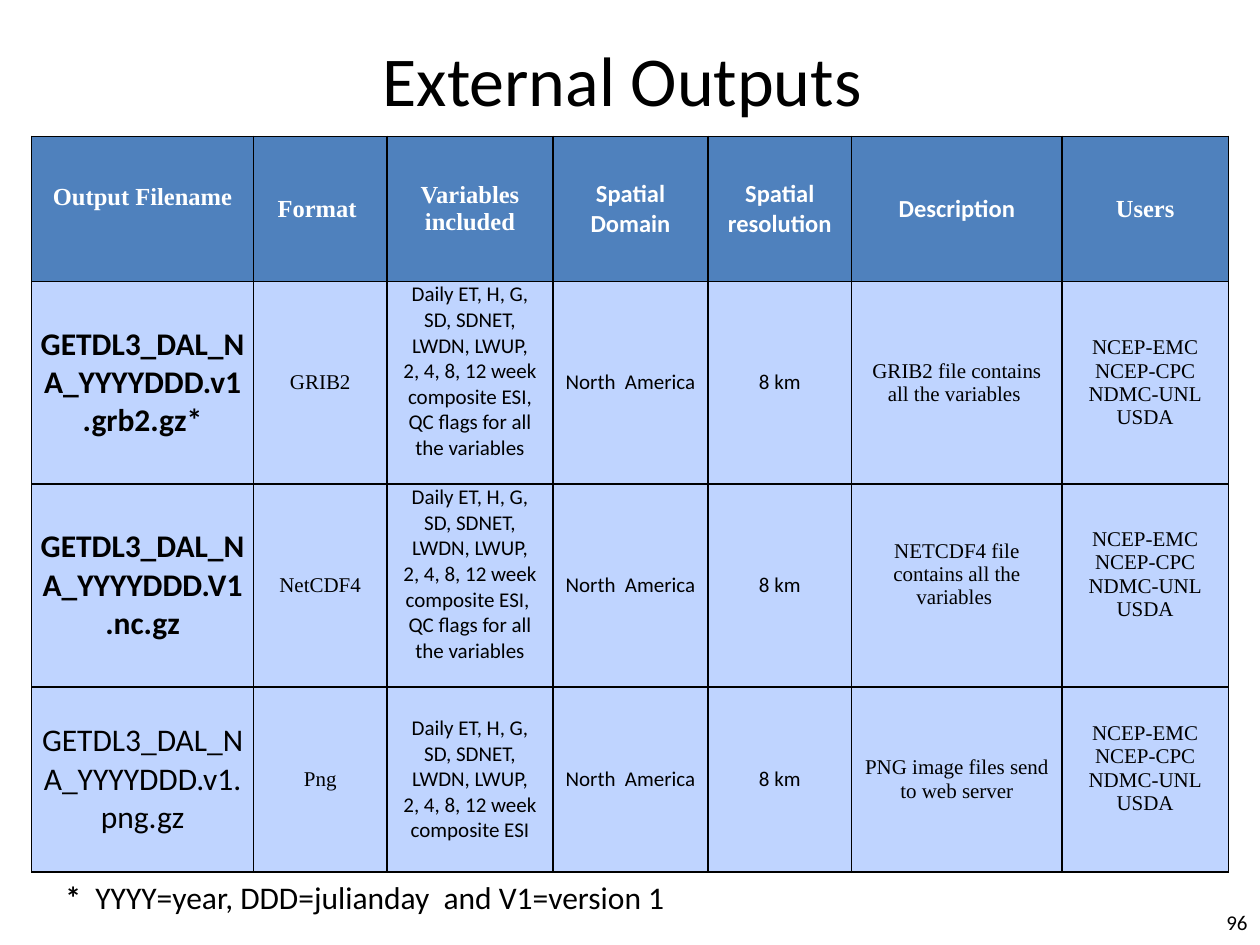
from lxml import etree
from pptx import Presentation
from pptx.dml.color import RGBColor
from pptx.enum.text import MSO_ANCHOR, PP_ALIGN
from pptx.oxml.ns import qn
from pptx.util import Cm, Pt

MID, TOP = MSO_ANCHOR.MIDDLE, MSO_ANCHOR.TOP
LEFT, MIDST, RIGHT = PP_ALIGN.LEFT, PP_ALIGN.CENTER, PP_ALIGN.RIGHT
SANS, SERIF = "Calibri", "Times New Roman"
BLACK, WHITE, BLUE, PALE = "000000", "FFFFFF", "4F81BD", "BFD4FF"


def write(frame, text, size=12, font=SANS, color=BLACK, bold=False, align=MIDST):
    """Fill a frame, one paragraph a line; text between | marks is bold."""
    frame.word_wrap = True
    for i, line in enumerate(text.split("\n")):
        para = frame.add_paragraph() if i else frame.paragraphs[0]
        para.alignment = align
        for j, part in enumerate(line.split("|")):
            if part:
                run = para.add_run()
                run.text = part
                run.font.size = Pt(size)
                run.font.name = font
                run.font.bold = bold or j % 2 == 1
                run.font.color.rgb = RGBColor.from_string(color)


def edge(cell):
    """Draw a thin black line on all four sides of a cell."""
    props = cell._tc.get_or_add_tcPr()
    for i, side in enumerate(("lnL", "lnR", "lnT", "lnB")):
        line = etree.Element(qn("a:" + side), w=str(Pt(1)))
        fill = etree.SubElement(line, qn("a:solidFill"))
        etree.SubElement(fill, qn("a:srgbClr"), val=BLACK)
        props.insert(i, line)


prs = Presentation()
prs.slide_width, prs.slide_height = Cm(25.4), Cm(19.05)
slide = prs.slides.add_slide(prs.slide_layouts[6])

# Title, page number and footnote
texts = [
    ((1.27, 0, 22.86, 3.18), "External Outputs ", MID, dict(size=40)),
    ((23.5, 18.08, 1.9, 1.02), "96", MID, dict(align=RIGHT)),
    ((1.07, 17.58, 19.25, 1.02), "|* | YYYY=year, DDD=julianday  and V1=version 1",
     TOP, dict(size=18, align=LEFT)),
]
for place, text, anchor, style in texts:
    frame = slide.shapes.add_textbox(*map(Cm, place)).text_frame
    frame.vertical_anchor = anchor
    write(frame, text, **style)

# Table content
heads = ["Output Filename", "Format ", "Variables included", "Spatial Domain",
         "Spatial resolution", "Description", "Users"]
daily = "Daily ET, H, G, SD, SDNET, LWDN, LWUP,\n2, 4, 8, 12 week composite ESI"
flags = "\nQC flags for all the variables"
area, res = "North  America", "8 km"
users = "NCEP-EMC\nNCEP-CPC\nNDMC-UNL\nUSDA"
rows = [
    heads,
    ["GETDL3_DAL_NA_YYYYDDD.v1.grb2.gz*", "GRIB2", daily + "," + flags,
     area, res, "GRIB2 file contains all the variables ", users],
    ["GETDL3_DAL_NA_YYYYDDD.V1.nc.gz", "NetCDF4", daily + ", " + flags,
     area, res, "NETCDF4 file contains all the variables ", users],
    ["GETDL3_DAL_NA_YYYYDDD.v1.png.gz", "Png", daily,
     area, res, "PNG image files send to web server", users],
]
wide = [4.47, 2.69, 3.35, 3.12, 2.9, 4.24, 3.35]
high = [2.92, 4.09, 4.09, 3.73]
head_fonts = [SERIF, SERIF, SERIF, SANS, SANS, SANS, SERIF]
body_fonts = [SANS, SERIF, SANS, SANS, SANS, SERIF, SERIF]
raised = {(0, 0), (1, 2), (2, 2), (2, 5), (2, 6), (3, 6)}  # text sits above centre

grid = slide.shapes.add_table(len(high), len(wide), Cm(0.64), Cm(2.75),
                              Cm(sum(wide)), Cm(sum(high))).table
for col, width in zip(grid.columns, wide):
    col.width = Cm(width)
for row, height in zip(grid.rows, high):
    row.height = Cm(height)

for r, row in enumerate(rows):
    for c, text in enumerate(row):
        cell = grid.cell(r, c)
        cell.vertical_anchor = MID
        cell.margin_left = cell.margin_right = Cm(0.18)
        cell.margin_top = 0
        cell.margin_bottom = Cm(0.45 if (r, c) in raised else 0)
        cell.fill.solid()
        cell.fill.fore_color.rgb = RGBColor.from_string(PALE if r else BLUE)
        edge(cell)
        if r == 0:
            write(cell.text_frame, text, size=14, font=head_fonts[c],
                  color=WHITE, bold=True)
        else:
            write(cell.text_frame, text, size=12 if c else 18,
                  font=body_fonts[c], bold=c == 0 and r < 3)

prs.save("out.pptx")
